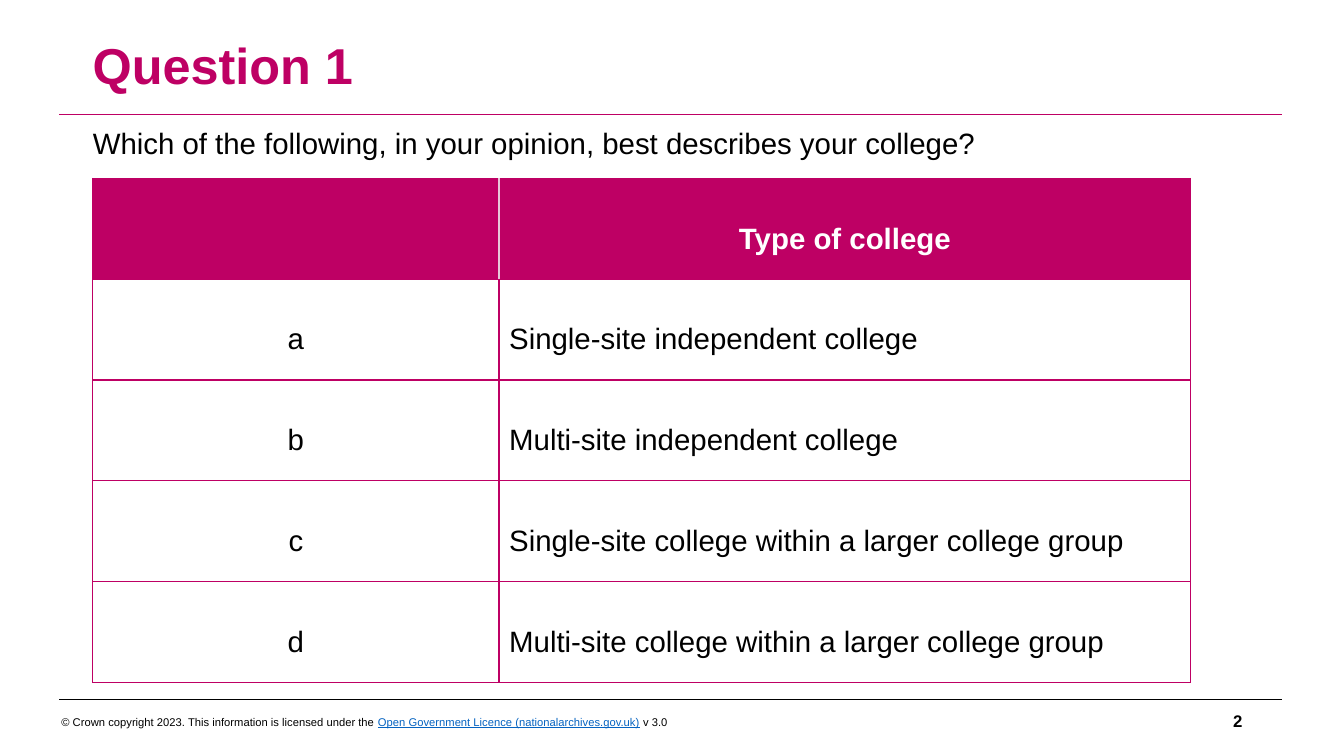
from dataclasses import dataclass

from lxml import etree
from pptx import Presentation
from pptx.dml.color import RGBColor
from pptx.enum.shapes import MSO_CONNECTOR
from pptx.enum.text import MSO_ANCHOR, PP_ALIGN
from pptx.oxml.ns import qn
from pptx.util import Inches, Pt

STRAIGHT = MSO_CONNECTOR.STRAIGHT
TOP, MIDDLE = MSO_ANCHOR.TOP, MSO_ANCHOR.MIDDLE
LEFT, CENTER, RIGHT = PP_ALIGN.LEFT, PP_ALIGN.CENTER, PP_ALIGN.RIGHT


@dataclass(frozen=True)
class Theme:
    """Colours, font and type sizes of the deck."""
    accent: str = "BE0064"
    divider: str = "E6C8D9"
    ink: str = "000000"
    paper: str = "FFFFFF"
    link: str = "0563C1"
    font: str = "Arial"
    title_size: int = 36
    body_size: int = 21
    number_size: int = 12
    footer_size: int = 8


THEME = Theme()
COLLEGE_TYPES = {
    "a": "Single-site independent college",
    "b": "Multi-site independent college",
    "c": "Single-site college within a larger college group",
    "d": "Multi-site college within a larger college group",
}
LICENCE = [
    ("© Crown copyright 2023. This information is licensed under the ", THEME.ink, None),
    ("Open Government Licence (nationalarchives.gov.uk)", THEME.link, True),
    (" v 3.0", THEME.ink, None),
]


def apply(target, **values):
    """Set every given attribute on the target."""
    for name, value in values.items():
        setattr(target, name, value)


def add_span(para, text, size, color, **values):
    """Add one formatted run to a paragraph."""
    span = para.add_run()
    span.text = text
    apply(span.font, name=THEME.font, size=Pt(size), **values)
    span.font.color.rgb = RGBColor.from_string(color)


def add_text(page, box, anchor=MIDDLE, align=LEFT, margins=(0.1, 0.05)):
    """Add a text box and return its first paragraph."""
    frame = page.shapes.add_textbox(*map(Inches, box)).text_frame
    across, down = map(Inches, margins)
    apply(frame, word_wrap=True, vertical_anchor=anchor, margin_left=across,
          margin_right=across, margin_top=down, margin_bottom=down)
    para = frame.paragraphs[0]
    para.alignment = align
    return para


def add_rule(page, left, top, width, color):
    """Draw a thin horizontal line."""
    rule = page.shapes.add_connector(
        STRAIGHT, *map(Inches, (left, top, left + width, top)))
    rule.line.width = Pt(0.75)
    rule.line.color.rgb = RGBColor.from_string(color)
    etree.SubElement(rule.element.spPr, qn("a:effectLst"))


def set_borders(cell, colors):
    """Give a cell one-point borders, coloured by side."""
    properties = cell._tc.get_or_add_tcPr()
    for side in "LRTB":
        edge = etree.SubElement(properties, qn(f"a:ln{side}"), w=str(Pt(1)))
        fill = etree.SubElement(edge, qn("a:solidFill"))
        etree.SubElement(fill, qn("a:srgbClr"), val=colors.get(side, THEME.accent))


def add_heading(page, left, top, width):
    """Place the title, the rule below it and the question."""
    title = add_text(page, (left + 0.23, top, 8.69, 1.11))
    title.line_spacing = 0.9
    add_span(title, "Question 1", THEME.title_size, THEME.accent, bold=True)
    add_rule(page, left, top + 1.02, width, THEME.accent)
    question = add_text(page, (left + 0.33, top + 1.12, 9.35, 0.35), TOP, margins=(0, 0))
    add_span(question, "Which of the following, in your opinion, best describes your college?",
             THEME.body_size, THEME.ink)


def add_answers(page, left, top, widths, row_height):
    """Place the table of lettered college types."""
    rows = [("", "Type of college"), *COLLEGE_TYPES.items()]
    frame = page.shapes.add_table(
        len(rows), len(widths),
        *map(Inches, (left, top, sum(widths), row_height * len(rows))))
    table = frame.table
    apply(table, first_row=False, horz_banding=False)
    for column, width in zip(table.columns, widths):
        column.width = Inches(width)
    for row_index, row in enumerate(rows):
        table.rows[row_index].height = Inches(row_height)
        header = row_index == 0
        for column_index, text in enumerate(row):
            cell = table.cell(row_index, column_index)
            apply(cell, vertical_anchor=MIDDLE, margin_left=Inches(0.1),
                  margin_right=Inches(0.1), margin_top=Inches(0.28),
                  margin_bottom=Inches(0.08))
            inner = "R" if column_index == 0 else "L"
            set_borders(cell, {inner: THEME.divider} if header else {})
            if header:
                cell.fill.solid()
                cell.fill.fore_color.rgb = RGBColor.from_string(THEME.accent)
            else:
                cell.fill.background()
            para = cell.text_frame.paragraphs[0]
            para.alignment = CENTER if header or column_index == 0 else LEFT
            if text:
                add_span(para, text, THEME.body_size,
                         THEME.paper if header else THEME.ink, bold=header)


def add_footer(page, left, top, width):
    """Place the footer rule, the licence line and the page number."""
    add_rule(page, left, top, width, THEME.ink)
    licence = add_text(page, (left - 0.08, top + 0.07, 8.41, 0.3))
    for text, color, underline in LICENCE:
        add_span(licence, text, THEME.footer_size, color, underline=underline)
    number = add_text(page, (left + 8.83, top + 0.01, 3, 0.4), align=RIGHT)
    add_span(number, "2", THEME.number_size, THEME.ink, bold=True)


def main():
    """Build the question slide and save the deck."""
    deck = Presentation()
    apply(deck, slide_width=Inches(13.33), slide_height=Inches(7.5))
    page = deck.slides.add_slide(deck.slide_layouts[6])
    add_footer(page, 0.59, 6.94, 12.13)
    add_heading(page, 0.59, 0.12, 12.13)
    add_answers(page, 0.92, 1.77, (4.03, 6.86), 1)
    deck.save("out.pptx")


if __name__ == "__main__":
    main()
